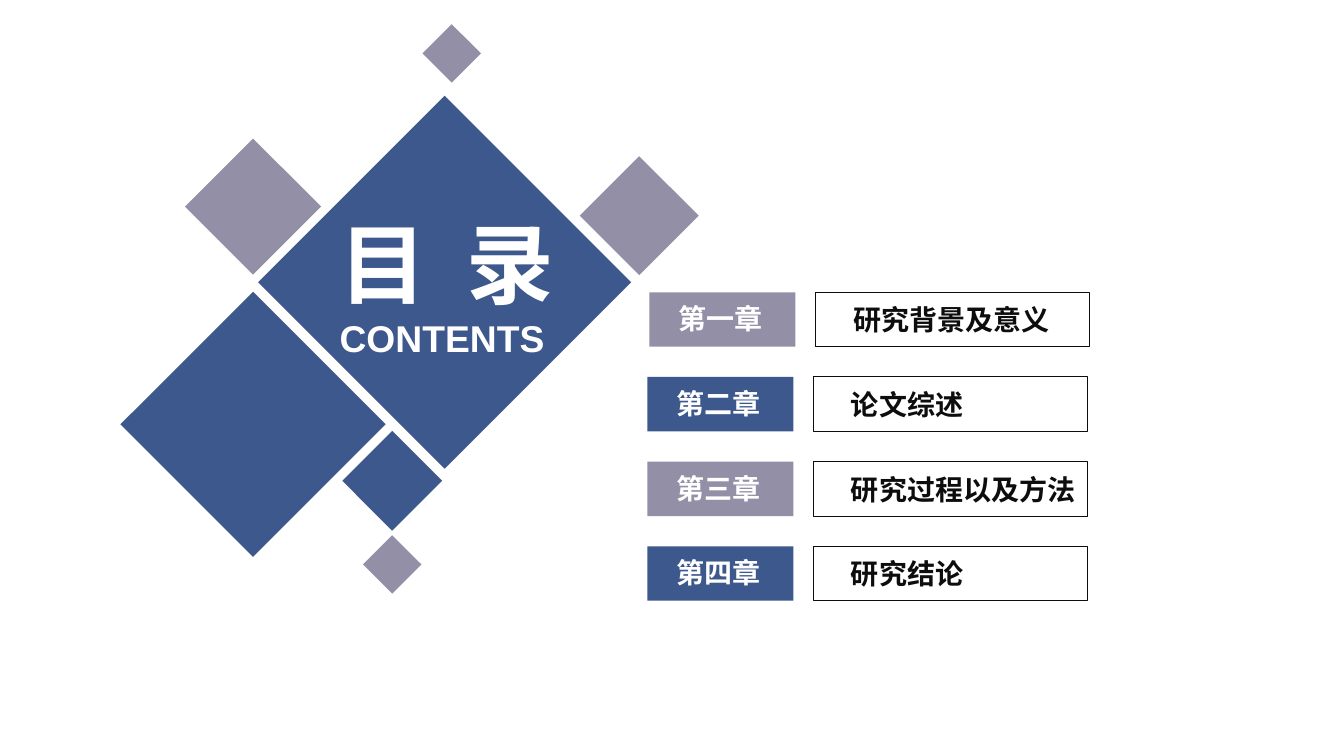
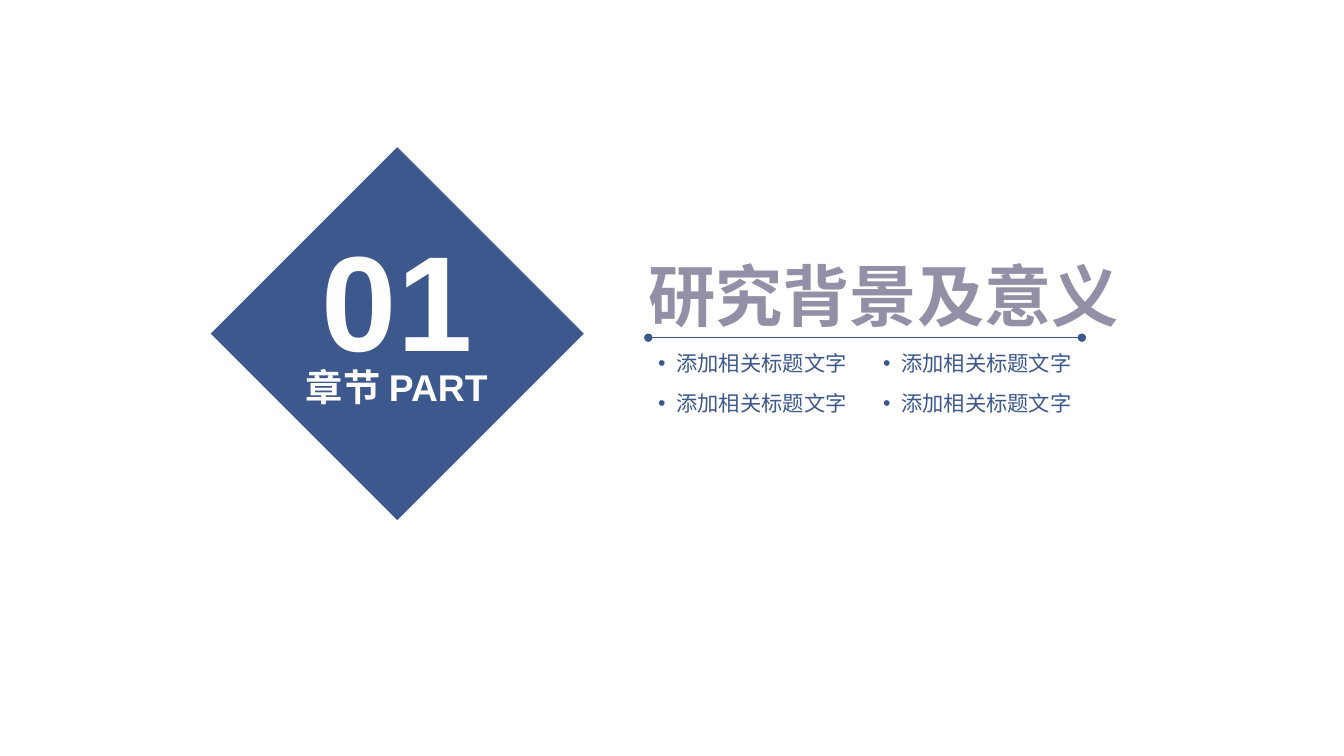
from dataclasses import dataclass
from itertools import product

from lxml import etree
from pptx import Presentation
from pptx.dml.color import RGBColor
from pptx.enum.shapes import MSO_CONNECTOR, MSO_SHAPE
from pptx.enum.text import MSO_ANCHOR, MSO_AUTO_SIZE, PP_ALIGN
from pptx.oxml.ns import qn
from pptx.shapes.autoshape import Shape
from pptx.slide import Slide
from pptx.util import Inches, Pt

DIAMOND = MSO_SHAPE.DIAMOND
RECTANGLE = MSO_SHAPE.RECTANGLE
STRAIGHT = MSO_CONNECTOR.STRAIGHT
TOP, MIDDLE = MSO_ANCHOR.TOP, MSO_ANCHOR.MIDDLE
LEFT, CENTER = PP_ALIGN.LEFT, PP_ALIGN.CENTER
FIXED_SIZE = MSO_AUTO_SIZE.NONE
TITLE_ONLY = 5


@dataclass(frozen=True)
class Theme:
    blue: RGBColor = RGBColor(0x3D, 0x58, 0x8C)
    mauve: RGBColor = RGBColor(0x93, 0x8F, 0xA7)
    ink: RGBColor = RGBColor(0x0D, 0x0D, 0x0D)
    white: RGBColor = RGBColor(0xFF, 0xFF, 0xFF)
    latin: str = "Arial"
    chinese: str = "Noto Sans CJK SC"
    number_size: float = 96.7
    contents_size: float = 62.5
    title_size: float = 48
    caption_size: float = 26.6
    chapter_size: float = 20
    bullet_size: float = 15.2


THEME = Theme()


@dataclass(frozen=True)
class Box:
    left: float
    top: float
    width: float
    height: float

    def lengths(self) -> tuple[int, int, int, int]:
        return Inches(self.left), Inches(self.top), Inches(self.width), Inches(self.height)


@dataclass(frozen=True)
class Diamond:
    center_x: float
    center_y: float
    size: float
    color: RGBColor


@dataclass(frozen=True)
class Chapter:
    number: str
    name: str
    color: RGBColor
    shift: float = 0


CONTENTS_DIAMONDS = (
    Diamond(2.51, 2.05, 1.35, THEME.mauve),
    Diamond(4.41, 2.8, 3.7, THEME.blue),
    Diamond(2.51, 4.21, 2.63, THEME.blue),
    Diamond(3.89, 4.77, 0.99, THEME.blue),
    Diamond(6.34, 2.14, 1.18, THEME.mauve),
    Diamond(3.89, 5.6, 0.58, THEME.mauve),
    Diamond(4.48, 0.53, 0.58, THEME.mauve),
)
CHAPTERS = (
    Chapter("第一章", "研究背景及意义", THEME.mauve, shift=0.02),
    Chapter("第二章", "论文综述", THEME.blue),
    Chapter("第三章", "研究过程以及方法", THEME.mauve),
    Chapter("第四章", "研究结论", THEME.blue),
)
CHAPTER_TOP, CHAPTER_PITCH, CHAPTER_HEIGHT = 2.9, 0.84, 0.54


def write_text(
    shape: Shape,
    text: str,
    *,
    size: float,
    color: RGBColor,
    font: str = THEME.latin,
    bold: bool = True,
    align: PP_ALIGN = LEFT,
    anchor: MSO_ANCHOR = TOP,
    margins: tuple[float, float, float, float] = (0, 0, 0, 0),
    wrap: bool = True,
    letter_spacing: float = 0,
    bullet_indent: float = 0,
) -> None:
    frame = shape.text_frame
    frame.auto_size = FIXED_SIZE
    frame.word_wrap = wrap
    frame.vertical_anchor = anchor
    frame.margin_left, frame.margin_top, frame.margin_right, frame.margin_bottom = map(Inches, margins)
    paragraph = frame.paragraphs[0]
    paragraph.alignment = align
    if bullet_indent:
        properties = paragraph._p.get_or_add_pPr()
        properties.set("marL", str(Inches(bullet_indent)))
        properties.set("indent", str(-Inches(bullet_indent)))
        etree.SubElement(properties, qn("a:buFont"), typeface=THEME.latin)
        etree.SubElement(properties, qn("a:buChar"), char="•")
    run = paragraph.add_run()
    run.text = text
    run.font.size = Pt(size)
    run.font.bold = bold
    run.font.color.rgb = color
    run.font.name = font
    run_properties = run._r.get_or_add_rPr()
    etree.SubElement(run_properties, qn("a:ea"), typeface=THEME.chinese)
    if letter_spacing:
        run_properties.set("spc", str(round(letter_spacing * 100)))


def add_text(slide: Slide, box: Box, text: str, **text_format) -> None:
    write_text(slide.shapes.add_textbox(*box.lengths()), text, **text_format)


def set_title(slide: Slide, box: Box, text: str, **text_format) -> None:
    title = slide.shapes.title
    title.left, title.top, title.width, title.height = box.lengths()
    title.element.getparent().append(title.element)
    write_text(title, text, **text_format)


def add_panel(
    slide: Slide,
    preset: MSO_SHAPE,
    box: Box,
    *,
    fill: RGBColor | None = None,
    outline: RGBColor | None = None,
) -> Shape:
    shape = slide.shapes.add_shape(preset, *box.lengths())
    shape.shadow.inherit = False
    if fill is None:
        shape.fill.background()
    else:
        shape.fill.solid()
        shape.fill.fore_color.rgb = fill
    if outline is None:
        shape.line.fill.background()
    else:
        shape.line.color.rgb = outline
        shape.line.width = Pt(0.75)
    return shape


def add_diamond(slide: Slide, diamond: Diamond) -> None:
    half = diamond.size / 2
    box = Box(diamond.center_x - half, diamond.center_y - half, diamond.size, diamond.size)
    add_panel(slide, DIAMOND, box, fill=diamond.color)


def add_chapter(slide: Slide, chapter: Chapter, top: float) -> None:
    name_box = Box(8.07 + chapter.shift, top, 2.72, CHAPTER_HEIGHT)
    name_panel = add_panel(slide, RECTANGLE, name_box, outline=THEME.ink)
    write_text(name_panel, chapter.name, size=THEME.chapter_size, color=THEME.ink,
               font=THEME.chinese, anchor=MIDDLE, margins=(0.37, 0, 0, 0))
    number_box = Box(6.42 + chapter.shift, top, 1.45, CHAPTER_HEIGHT)
    number_panel = add_panel(slide, RECTANGLE, number_box, fill=chapter.color)
    write_text(number_panel, chapter.number, size=THEME.chapter_size, color=THEME.white,
               font=THEME.chinese, anchor=MIDDLE, margins=(0.29, 0, 0, 0.02))


def add_dotted_end_rule(slide: Slide, left: float, right: float, y: float) -> None:
    rule = slide.shapes.add_connector(STRAIGHT, Inches(left), Inches(y), Inches(right), Inches(y))
    rule.line.color.rgb = THEME.blue
    rule.line.width = Pt(1)
    line = rule.line._get_or_add_ln()
    for end in ("a:headEnd", "a:tailEnd"):
        etree.SubElement(line, qn(end), type="oval")
    etree.SubElement(line.getparent(), qn("a:effectLst"))


def build_contents(slide: Slide) -> None:
    for diamond in CONTENTS_DIAMONDS:
        add_diamond(slide, diamond)
    set_title(slide, Box(2.94, 2.08, 2.98, 1.05), "目 录", size=THEME.contents_size,
              color=THEME.white, align=CENTER, anchor=MIDDLE, letter_spacing=7)
    add_text(slide, Box(2.91, 3.13, 2.95, 0.45), "CONTENTS", size=THEME.caption_size,
             color=THEME.white, align=CENTER)
    for index, chapter in enumerate(CHAPTERS):
        add_chapter(slide, chapter, CHAPTER_TOP + index * CHAPTER_PITCH)


def build_section(slide: Slide) -> None:
    add_diamond(slide, Diamond(3.94, 3.31, 3.7, THEME.blue))
    add_text(slide, Box(3.06, 2.14, 1.76, 1.63), "01", size=THEME.number_size,
             color=THEME.white, align=CENTER)
    add_dotted_end_rule(slide, 6.43, 10.73, 3.35)
    add_text(slide, Box(2.14, 3.61, 3.59, 0.45), "章节 PART", size=THEME.caption_size,
             color=THEME.white, align=CENTER)
    set_title(slide, Box(6.43, 2.52, 5.43, 0.81), CHAPTERS[0].name, size=THEME.title_size,
              color=THEME.mauve, font=THEME.chinese)
    for top, left in product((3.43, 3.82), (6.43, 8.66)):
        add_text(slide, Box(left, top, 2.08, 0.36), "添加相关标题文字", size=THEME.bullet_size,
                 color=THEME.blue, bold=False, wrap=False, bullet_indent=0.18,
                 margins=(0.1, 0.05, 0.1, 0.05))


def main() -> None:
    presentation = Presentation()
    presentation.slide_width = Inches(13.33)
    presentation.slide_height = Inches(7.5)
    layout = presentation.slide_layouts[TITLE_ONLY]
    for build in (build_contents, build_section):
        build(presentation.slides.add_slide(layout))
    presentation.save("out.pptx")


if __name__ == "__main__":
    main()
